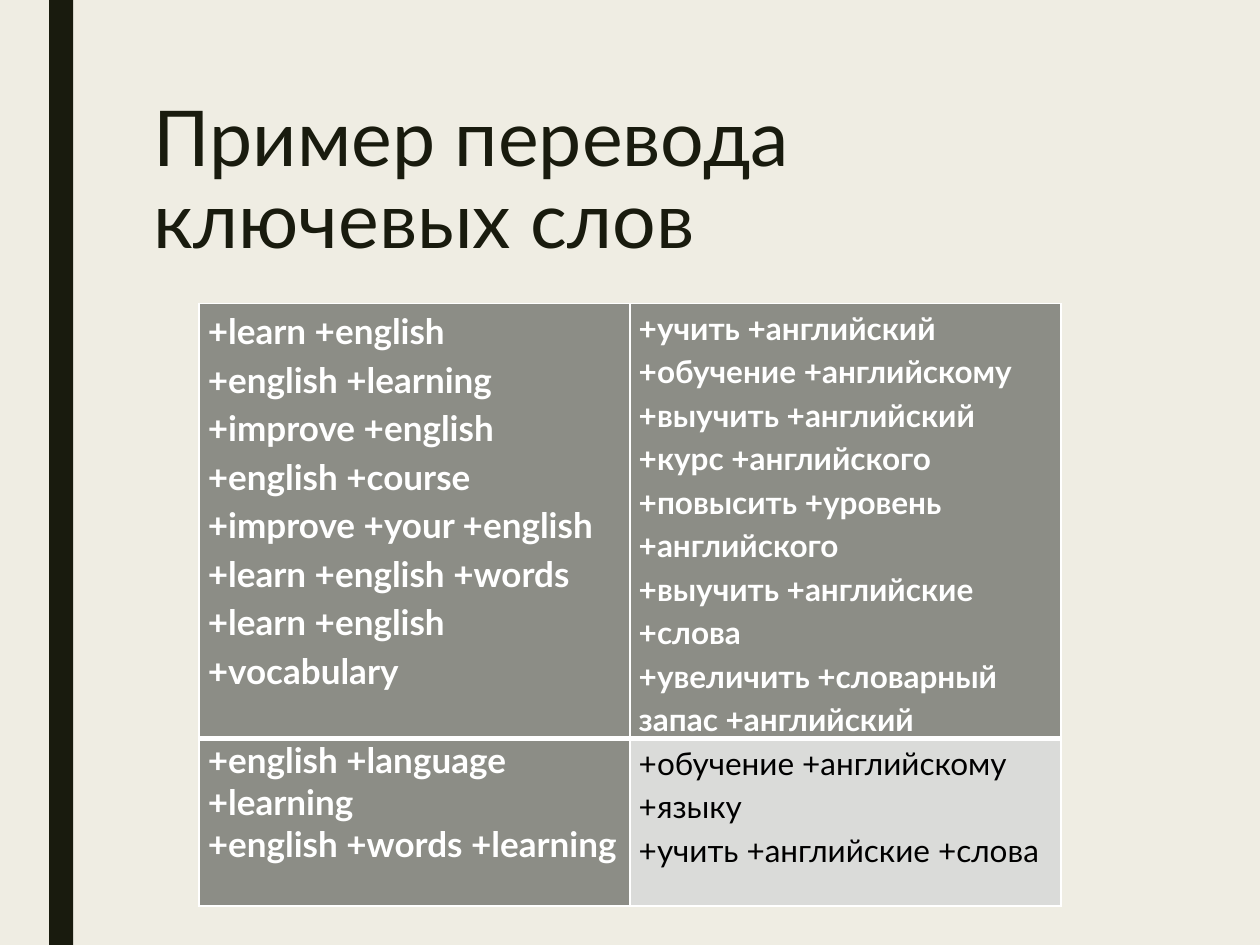
import pptx
import pptx.dml.color
import pptx.enum.shapes
import pptx.enum.text
import pptx.oxml
import pptx.oxml.ns
import pptx.util

Inches = pptx.util.Inches
FONT = "Lato"
DARK, CREAM, WHITE, BLACK = "191B0E", "EFEDE3", "FFFFFF", "000000"
GREY, PALE = "8C8D86", "DADBD9"

ROWS = [
    (3.45, [
        (["+learn +english", "+english +learning", "+improve +english",
          "+english +course", "+improve +your +english",
          "+learn +english +words", "+learn +english +vocabulary"],
         20, True, WHITE, GREY, 1.15),
        (["+учить +английский", "+обучение +английскому",
          "+выучить +английский", "+курс +английского",
          "+повысить +уровень +английского", "+выучить +английские +слова",
          "+увеличить +словарный запас +английский"],
         18, True, WHITE, GREY, 1.15),
    ]),
    (1.33, [
        (["+english +language +learning", "+english +words +learning"],
         20, True, WHITE, GREY, 1.0),
        (["+обучение +английскому +языку", "+учить +английские +слова"],
         18, False, BLACK, PALE, 1.15),
    ]),
]


def rgb(value):
    return pptx.dml.color.RGBColor.from_string(value)


def paint(fill, color):
    fill.solid()
    fill.fore_color.rgb = rgb(color)


def add_run(p, text, size, color, bold=False):
    r = p.add_run()
    r.text = text
    r.font.name = FONT
    r.font.size = pptx.util.Pt(size)
    r.font.bold = bold
    r.font.color.rgb = rgb(color)


def add_bar(s, left, top, width, height):
    sp = s.shapes.add_shape(pptx.enum.shapes.MSO_SHAPE.RECTANGLE,
                            Inches(left), Inches(top), Inches(width), Inches(height))
    sp.shadow.inherit = False
    paint(sp.fill, DARK)
    sp.line.fill.background()


def add_title(s, left, top, width, height):
    sp = s.shapes.title
    sp.left, sp.top = Inches(left), Inches(top)
    sp.width, sp.height = Inches(width), Inches(height)
    tf = sp.text_frame
    tf.word_wrap = True
    tf.auto_size = pptx.enum.text.MSO_AUTO_SIZE.NONE
    tf.vertical_anchor = pptx.enum.text.MSO_ANCHOR.TOP
    p = tf.paragraphs[0]
    p.alignment = pptx.enum.text.PP_ALIGN.LEFT
    p.line_spacing = 0.89
    add_run(p, "Пример перевода ключевых слов", 44, DARK)


def set_borders(cell, widths):
    tc_pr = cell._tc.get_or_add_tcPr()
    for i, (side, width) in enumerate(widths.items()):
        tc_pr.insert(i, pptx.oxml.parse_xml(
            f'<a:ln{side} {pptx.oxml.ns.nsdecls("a")} w="{pptx.util.Pt(width)}">'
            f'<a:solidFill><a:srgbClr val="{WHITE}"/></a:solidFill></a:ln{side}>'))


def fill_cell(cell, lines, size, bold, color, fill, spacing):
    paint(cell.fill, fill)
    cell.margin_left = cell.margin_right = Inches(0.07)
    cell.margin_top = cell.margin_bottom = 0
    p = cell.text_frame.paragraphs[0]
    p.line_spacing = spacing
    for i, line in enumerate(lines):
        if i:
            p.add_line_break()
        add_run(p, line, size, color, bold)


def add_keywords(s, left, top, width):
    height = sum(h for h, _ in ROWS)
    table = s.shapes.add_table(len(ROWS), 2, Inches(left), Inches(top),
                               Inches(width), Inches(height)).table
    for i, (row_height, cells) in enumerate(ROWS):
        table.rows[i].height = Inches(row_height)
        for j, content in enumerate(cells):
            cell = table.cell(i, j)
            fill_cell(cell, *content)
            set_borders(cell, {"L": 1, "R": 1, "T": 3 if i == 1 else 1,
                               "B": 3 if i == 0 else 1})


def main():
    prs = pptx.Presentation()
    prs.slide_width, prs.slide_height = Inches(10), Inches(7.5)
    s = prs.slides.add_slide(prs.slide_layouts[5])
    paint(s.background.fill, CREAM)
    add_bar(s, 0.39, 0, 0.19, 7.5)
    add_title(s, 1.12, 0.75, 7.88, 1.62)
    add_keywords(s, 1.58, 2.41, 6.84)
    prs.save("out.pptx")


if __name__ == "__main__":
    main()
